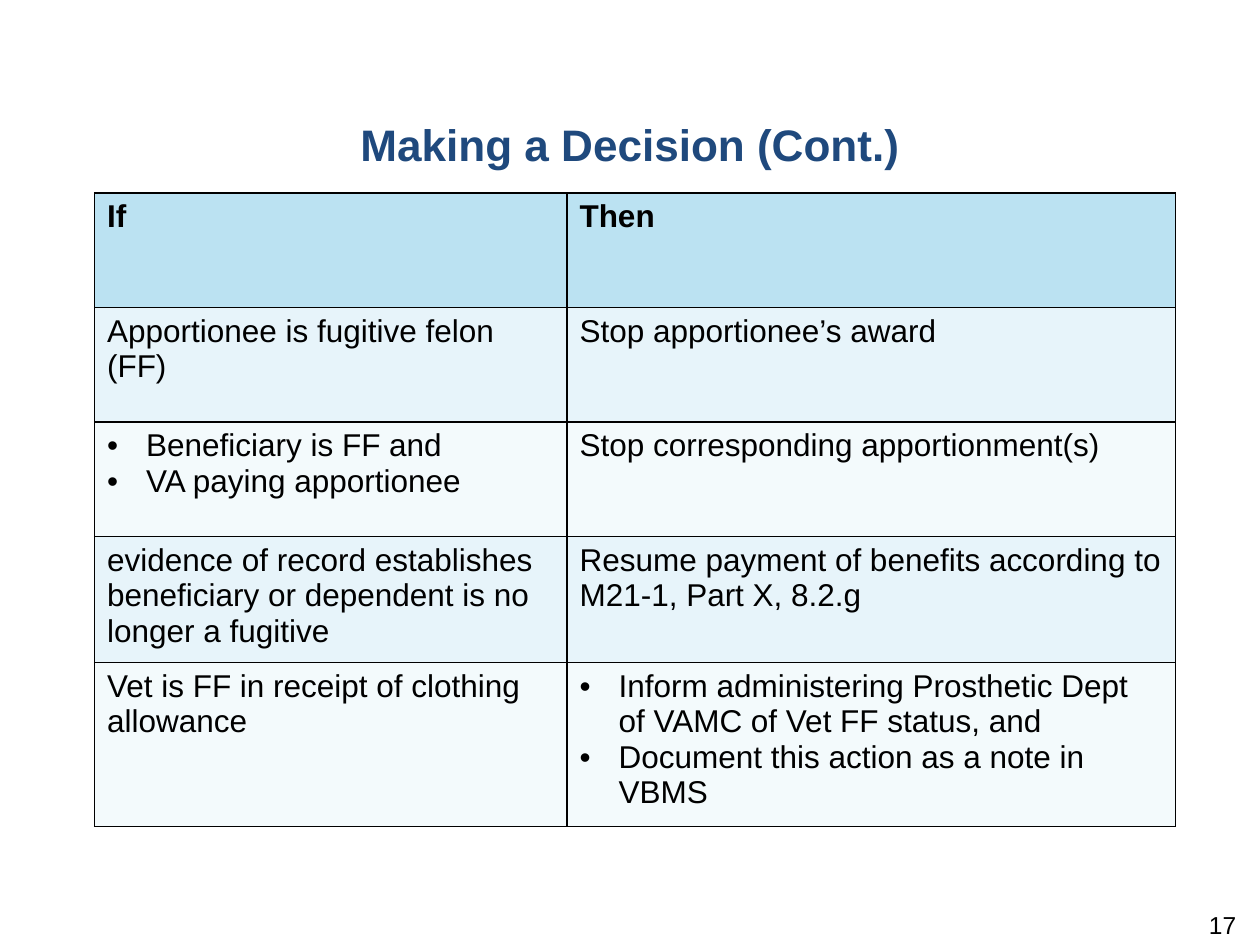
"""Build the fugitive felon decision table slide."""
from dataclasses import dataclass

from lxml import etree
from pptx import Presentation
from pptx.dml.color import RGBColor
from pptx.enum import text
from pptx.oxml import ns
from pptx.util import Inches, Pt

NAVY = RGBColor(0x1F, 0x49, 0x7D)
BLACK = RGBColor(0x00, 0x00, 0x00)
HEADER = RGBColor(0xBB, 0xE2, 0xF2)
BAND_DARK = RGBColor(0xE7, 0xF4, 0xFA)
BAND_LIGHT = RGBColor(0xF3, 0xFA, 0xFC)
FONT = "Arial"


@dataclass
class Entry:
    text: str
    bulleted: bool = False


ROWS = [
    (Entry("If"), Entry("Then")),
    (Entry("Apportionee is fugitive felon (FF)"), Entry("Stop apportionee’s award")),
    (Entry("Beneficiary is FF and\nVA paying apportionee", True),
     Entry("Stop corresponding apportionment(s)")),
    (Entry("evidence of record establishes beneficiary or dependent is no longer a fugitive"),
     Entry("Resume payment of benefits according to M21-1, Part X, 8.2.g")),
    (Entry("Vet is FF in receipt of clothing allowance"),
     Entry("Inform administering Prosthetic Dept of VAMC of Vet FF status, and\n"
           "Document this action as a note in VBMS", True)),
]
COLUMN_WIDTHS = (3.75, 4.83)
ROW_HEIGHT = 0.91


def style(p, size: float, color: RGBColor, bold: bool = False) -> None:
    for r in p.runs:
        r.font.name = FONT
        r.font.size = Pt(size)
        r.font.bold = bold
        r.font.color.rgb = color


def add_bullet(p) -> None:
    pPr = p._p.get_or_add_pPr()
    pPr.set("marL", str(Inches(0.31)))
    pPr.set("indent", str(Inches(-0.31)))
    etree.SubElement(pPr, ns.qn("a:buFont"), typeface=FONT)
    etree.SubElement(pPr, ns.qn("a:buChar"), char="•")


def add_borders(cell) -> None:
    tcPr = cell._tc.get_or_add_tcPr()
    for i, side in enumerate(("lnL", "lnR", "lnT", "lnB")):
        ln = etree.Element(ns.qn(f"a:{side}"), w=str(Pt(1)))
        fill = etree.SubElement(ln, ns.qn("a:solidFill"))
        etree.SubElement(fill, ns.qn("a:srgbClr"), val=str(BLACK))
        tcPr.insert(i, ln)


def fill_cell(cell, entry: Entry, color: RGBColor, bold: bool) -> None:
    cell.fill.solid()
    cell.fill.fore_color.rgb = color
    add_borders(cell)
    cell.text_frame.text = entry.text
    for p in cell.text_frame.paragraphs:
        if entry.bulleted:
            add_bullet(p)
        style(p, 18, BLACK, bold)


def add_title(s) -> None:
    title = s.shapes.title
    title.left, title.top = Inches(0), Inches(0.87)
    title.width, title.height = Inches(10), Inches(0.55)
    tf = title.text_frame
    tf.text = "Making a Decision (Cont.)"
    tf.vertical_anchor = text.MSO_ANCHOR.MIDDLE
    p = tf.paragraphs[0]
    p.alignment = text.PP_ALIGN.CENTER
    style(p, 25.2, NAVY, True)


def add_decisions(s) -> None:
    table = s.shapes.add_table(
        len(ROWS), len(COLUMN_WIDTHS), Inches(0.75), Inches(1.53),
        Inches(sum(COLUMN_WIDTHS)), Inches(ROW_HEIGHT * len(ROWS))).table
    for column, width in zip(table.columns, COLUMN_WIDTHS):
        column.width = Inches(width)
    for i, entries in enumerate(ROWS):
        color = HEADER if i == 0 else BAND_DARK if i % 2 else BAND_LIGHT
        for j, entry in enumerate(entries):
            fill_cell(table.cell(i, j), entry, color, i == 0)


def add_page_number(s) -> None:
    box = s.shapes.add_textbox(Inches(7.58), Inches(7.22), Inches(2.33), Inches(0.4))
    tf = box.text_frame
    tf.word_wrap = True
    tf.margin_top = Inches(0)
    tf.text = "17"
    p = tf.paragraphs[0]
    p.alignment = text.PP_ALIGN.RIGHT
    style(p, 14, BLACK)


def main() -> None:
    prs = Presentation()
    prs.slide_width, prs.slide_height = Inches(10), Inches(7.5)
    s = prs.slides.add_slide(prs.slide_layouts[5])
    add_title(s)
    add_page_number(s)
    add_decisions(s)
    prs.save("out.pptx")


if __name__ == "__main__":
    main()
